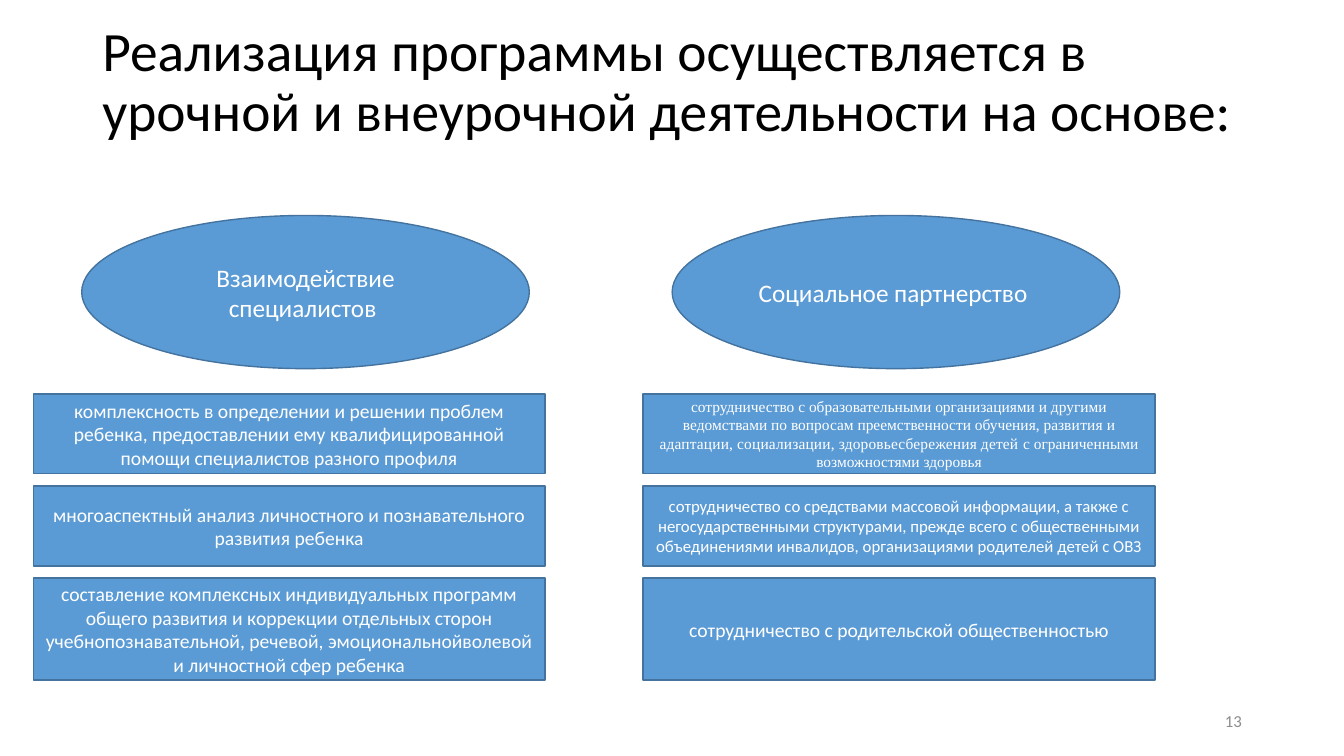
from pptx import Presentation
from pptx.dml.color import RGBColor
from pptx.enum import shapes, text
from pptx.util import Cm, Pt

TITLE = "Реализация программы осуществляется в урочной и внеурочной деятельности на основе:"
NUMBER = "13"
SANS, SERIF = "Calibri", "Times New Roman"
COLUMNS = [
    {
        "head": "Взаимодействие специалистов ",
        "head_left": 2.06,
        "left": 0.84,
        "boxes": [
            (14, SANS, [("комплексность в определении и решении проблем ребенка, предоставлении ему "
                         "квалифицированной помощи специалистов разного профиля", 0)]),
            (14, SANS, [("многоаспектный анализ личностного и познавательного развития ребенка", 0)]),
            (14, SANS, [("составление комплексных индивидуальных программ общего развития и коррекции "
                         "отдельных сторон учебнопознавательной, речевой, эмоциональнойволевой и "
                         "личностной сфер ребенка", 0)]),
        ],
    },
    {
        "head": "Социальное партнерство ",
        "head_left": 16.94,
        "left": 16.21,
        "boxes": [
            (11, SERIF, [("сотрудничество с образовательными организациями и другими ведомствами "
                          "по вопросам преемственности обучения, разви", 0),
                         ("тия и адаптации, социализации, здоровьесбережения детей ", 10),
                         ("с ограниченными возможностями здоровья", 0)]),
            (12, SANS, [("сотрудничество со средствами массовой информации, а также с "
                         "негосударственными структурами, прежде всего с общественными "
                         "объединениями инвалидов, организациями родителей детей с ОВЗ", 0)]),
            (14, SANS, [("сотрудничество с родительской общественностью", 0)]),
        ],
    },
]
COLORS = {"fill": "5B9BD5", "line": "43739E", "light": "FFFFFF", "title": "000000", "number": "8C8C8C"}
HEAD_TOP, HEAD_W, HEAD_H = 5.43, 11.28, 3.86
BOX_TOP, BOX_W, BOX_GAP = 9.93, 12.9, 0.31
BOX_HEIGHTS = [2.01, 2.01, 2.57]


def rgb(name):
    return RGBColor.from_string(COLORS[name])


def write(sp, runs, size, font, color, align):
    tf = sp.text_frame
    tf.word_wrap = True
    tf.vertical_anchor = text.MSO_ANCHOR.MIDDLE
    p = tf.paragraphs[0]
    p.alignment = align
    for words, spacing in runs:
        r = p.add_run()
        r.text = words
        r.font.size = Pt(size)
        r.font.name = font
        r.font.color.rgb = rgb(color)
        if spacing:
            r._r.get_or_add_rPr().set("spc", str(spacing))
    return p


def add_block(s, kind, box, runs, size, font):
    sp = s.shapes.add_shape(kind, *map(Cm, box))
    sp.shadow.inherit = False
    sp.fill.solid()
    sp.fill.fore_color.rgb = rgb("fill")
    sp.line.color.rgb = rgb("line")
    sp.line.width = Pt(1)
    write(sp, runs, size, font, "light", text.PP_ALIGN.CENTER)


def main():
    prs = Presentation()
    prs.slide_width, prs.slide_height = Cm(33.87), Cm(19.05)
    s = prs.slides.add_slide(prs.slide_layouts[6])

    title = s.shapes.add_textbox(Cm(2.33), Cm(1.02), Cm(29.21), Cm(3.68))
    p = write(title, [(TITLE, 0)], 39.6, SANS, "title", text.PP_ALIGN.LEFT)
    p.line_spacing = 0.9
    title.text_frame.margin_bottom = Cm(1.65)

    for column in COLUMNS:
        add_block(s, shapes.MSO_SHAPE.OVAL, (column["head_left"], HEAD_TOP, HEAD_W, HEAD_H),
                  [(column["head"], 0)], 18, SANS)
        top = BOX_TOP
        for height, (size, font, runs) in zip(BOX_HEIGHTS, column["boxes"]):
            add_block(s, shapes.MSO_SHAPE.RECTANGLE, (column["left"], top, BOX_W, height),
                      runs, size, font)
            top += height + BOX_GAP

    number = s.shapes.add_textbox(Cm(23.93), Cm(17.65), Cm(7.62), Cm(1.02))
    write(number, [(NUMBER, 0)], 12, SANS, "number", text.PP_ALIGN.RIGHT)

    prs.save("out.pptx")


if __name__ == "__main__":
    main()
